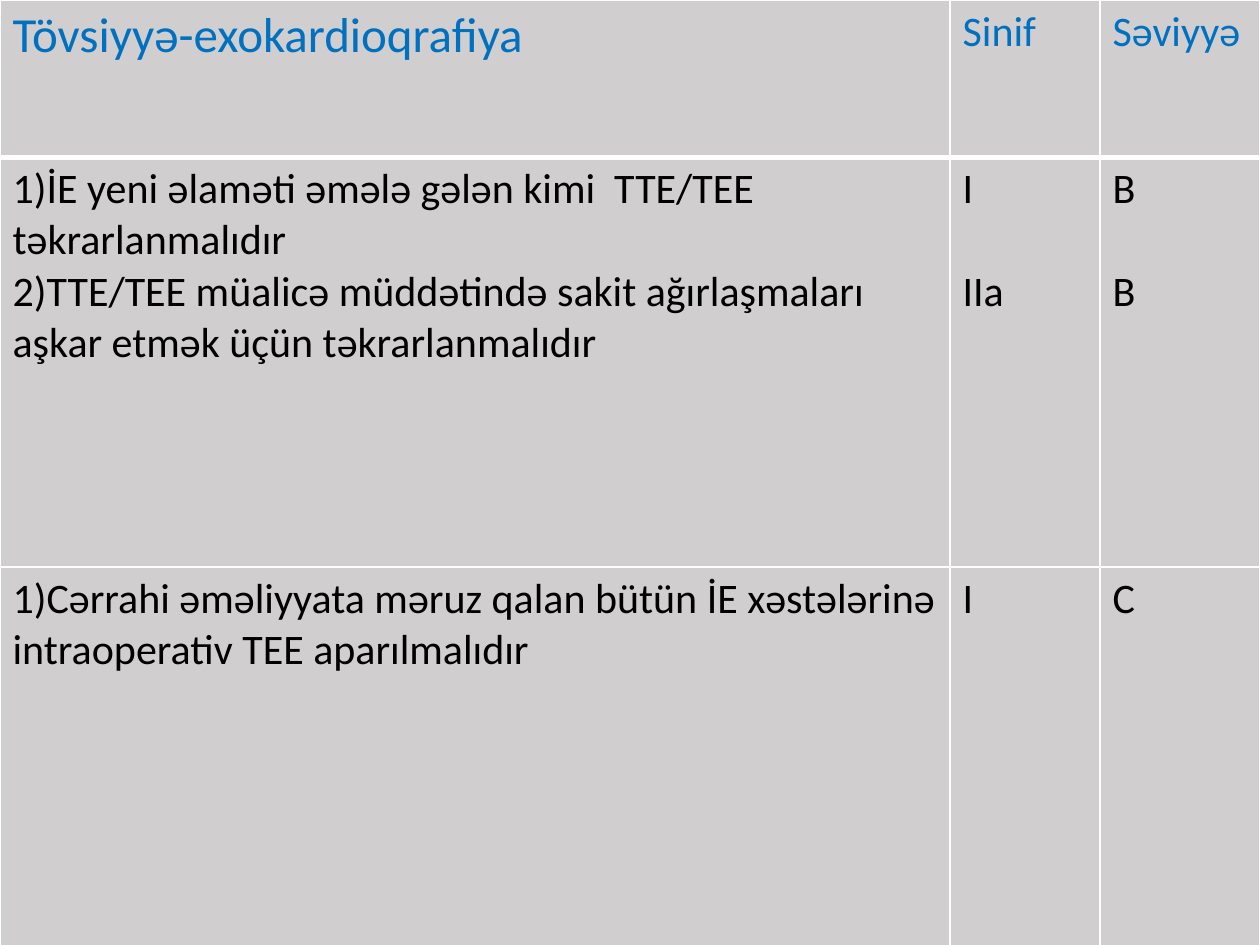
import lxml.etree
import pptx
import pptx.dml.color
import pptx.oxml.ns
import pptx.util

Inches = pptx.util.Inches
Pt = pptx.util.Pt
RGBColor = pptx.dml.color.RGBColor

BLUE = RGBColor(0x00, 0x70, 0xC0)
BLACK = RGBColor(0x00, 0x00, 0x00)
GREY = RGBColor(0xD0, 0xCE, 0xCE)
WHITE = RGBColor(0xFF, 0xFF, 0xFF)

TITLE_FORMAT = {"name": "Calibri", "size": Pt(28), "bold": False, "color": BLUE}
HEADER_FORMAT = {**TITLE_FORMAT, "size": Pt(24)}
BODY_FORMAT = {**HEADER_FORMAT, "color": BLACK}

HEADER_BORDERS = {"lnL": 1, "lnR": 1, "lnT": 1, "lnB": 3}
SKIPPED_LINE = Pt(29.3)
COLUMN_WIDTHS = (7.54, 1.19, 1.27)
ROW_HEIGHTS = (1.25, 3.25, 3.17)
ROWS = (
    (("Tövsiyyə-exokardioqrafiya",), ("Sinif",), ("Səviyyə",)),
    (
        (
            "1)İE yeni əlaməti əmələ gələn kimi  TTE/TEE təkrarlanmalıdır",
            "2)TTE/TEE müalicə müddətində sakit ağırlaşmaları aşkar etmək üçün təkrarlanmalıdır",
        ),
        ("I", "IIa"),
        ("B", "B"),
    ),
    (
        ("1)Cərrahi əməliyyata məruz qalan bütün İE xəstələrinə intraoperativ TEE aparılmalıdır",),
        ("I",),
        ("C",),
    ),
)


def apply_format(font, values):
    """Set font attributes from a dict of format values."""
    for name, value in values.items():
        if name == "color":
            font.color.rgb = value
        else:
            setattr(font, name, value)


def add_borders(cell, widths):
    """Draw white borders of the given point widths on a cell."""
    qn = pptx.oxml.ns.qn
    properties = cell._tc.get_or_add_tcPr()
    for side, width in widths.items():
        line = lxml.etree.SubElement(properties, qn(f"a:{side}"), w=str(Pt(width)))
        fill = lxml.etree.SubElement(line, qn("a:solidFill"))
        lxml.etree.SubElement(fill, qn("a:srgbClr"), val=str(WHITE))


def fill_cell(cell, lines, values, gap):
    """Fill a cell with grey and one formatted paragraph for each line."""
    cell.fill.solid()
    cell.fill.fore_color.rgb = GREY
    for index, line in enumerate(lines):
        frame = cell.text_frame
        paragraph = frame.add_paragraph() if index else frame.paragraphs[0]
        run = paragraph.add_run()
        run.text = line
        apply_format(run.font, values)
        if index:
            paragraph.space_before = gap


def add_recommendations(slide, left, top, width, height):
    """Place the recommendation table in the given box."""
    shape = slide.shapes.add_table(len(ROWS), len(COLUMN_WIDTHS), left, top, width, height)
    table = shape.table
    table.horz_banding = False
    for column, share in zip(table.columns, COLUMN_WIDTHS):
        column.width = int(width * share / sum(COLUMN_WIDTHS))
    for row, share in zip(table.rows, ROW_HEIGHTS):
        row.height = int(height * share / sum(ROW_HEIGHTS))
    for row_index, row in enumerate(ROWS):
        for column_index, lines in enumerate(row):
            cell = table.cell(row_index, column_index)
            values = BODY_FORMAT
            if row_index == 0:
                add_borders(cell, HEADER_BORDERS)
                values = HEADER_FORMAT if column_index else TITLE_FORMAT
            fill_cell(cell, lines, values, SKIPPED_LINE if column_index else Pt(0))


def main():
    """Build and save the presentation."""
    presentation = pptx.Presentation()
    presentation.slide_width = Inches(10)
    presentation.slide_height = Inches(7.5)
    slide = presentation.slides.add_slide(presentation.slide_layouts[6])
    add_recommendations(slide, Inches(0), Inches(0), Inches(10), Inches(7.67))
    presentation.save("out.pptx")


if __name__ == "__main__":
    main()
